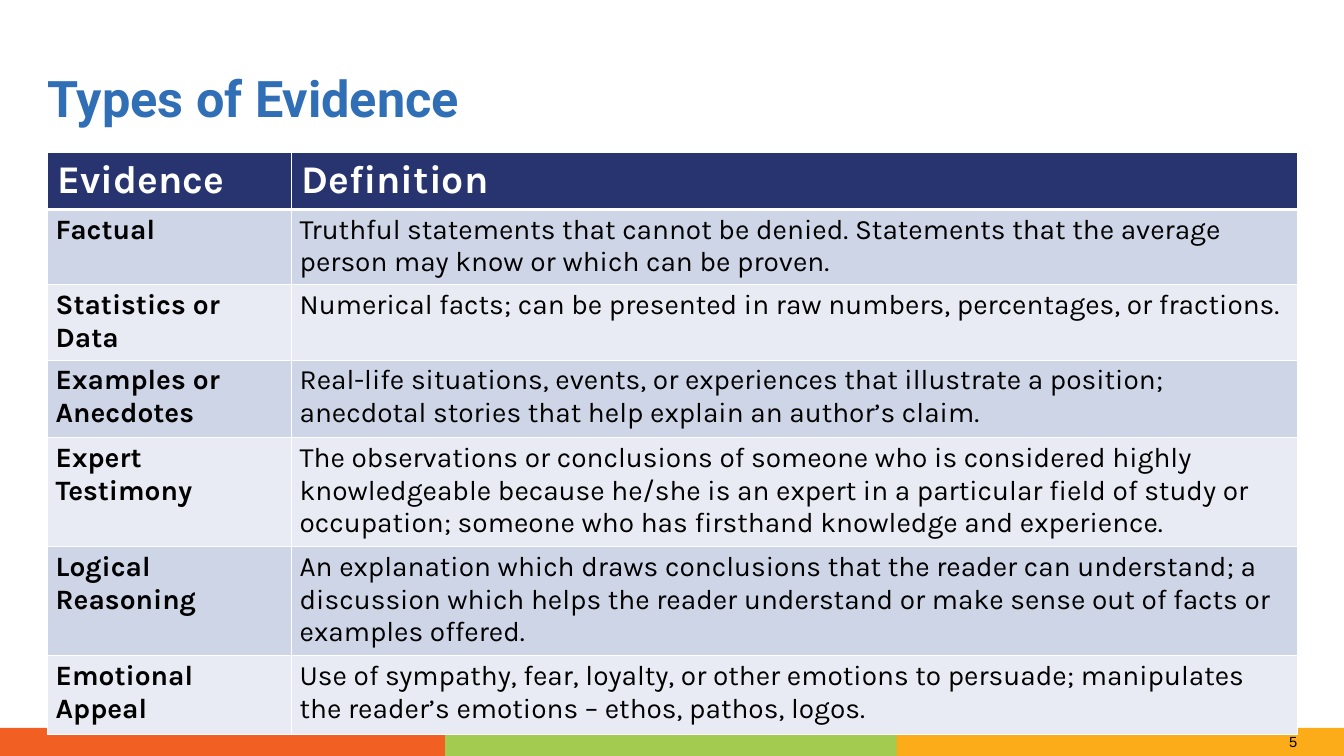
from pptx import Presentation
from pptx.dml.color import RGBColor
from pptx.enum.shapes import MSO_SHAPE
from pptx.enum.text import MSO_ANCHOR, PP_ALIGN
from pptx.oxml import parse_xml
from pptx.oxml.ns import nsdecls
from pptx.util import Pt

WHITE = RGBColor(0xFF, 0xFF, 0xFF)
BLACK = RGBColor(0, 0, 0)
BLUE = RGBColor(0x30, 0x6E, 0xB6)
NAVY = RGBColor(0x27, 0x34, 0x6F)
DARK = RGBColor(0xCD, 0xD5, 0xE6)
LIGHT = RGBColor(0xE8, 0xEB, 0xF3)
ORANGE = RGBColor(0xF1, 0x5F, 0x22)
GREEN = RGBColor(0xA2, 0xCB, 0x4F)
AMBER = RGBColor(0xFB, 0xAC, 0x18)


def write(frame, text, name, size, color, bold):
    frame.text = text
    font = frame.paragraphs[0].runs[0].font
    look = {"name": name, "size": Pt(size), "bold": bold}
    for key, value in look.items():
        setattr(font, key, value)
    font.color.rgb = color


def edge(cell, side, width):
    cell._tc.get_or_add_tcPr().append(parse_xml(
        f'<a:{side} {nsdecls("a")} w="{Pt(width)}"><a:solidFill>'
        f'<a:srgbClr val="{WHITE}"/></a:solidFill></a:{side}>'))


deck = Presentation()
deck.slide_width, deck.slide_height = Pt(960), Pt(540)
slide = deck.slides.add_slide(deck.slide_layouts[5])
shapes = slide.shapes

# Footer bars
for left, width, color in [(640, 320, AMBER), (0, 320, ORANGE), (318, 322.5, GREEN)]:
    bar = shapes.add_shape(MSO_SHAPE.RECTANGLE, Pt(left), Pt(520), Pt(width), Pt(20))
    bar.shadow.inherit = False
    bar.fill.solid()
    bar.fill.fore_color.rgb = color
    bar.line.fill.background()

# Page number
page = shapes.add_textbox(Pt(913.7), Pt(520), Pt(27.4), Pt(20))
page.text_frame.word_wrap = True
write(page.text_frame, "5", "Arial", 10.5, BLACK, False)

# Title
title = shapes.title
place = {"left": 34, "top": 55.5, "width": 893, "height": 34}
for key, value in place.items():
    setattr(title, key, Pt(value))
frame = title.text_frame
for side in ("left", "top", "right", "bottom"):
    setattr(frame, f"margin_{side}", 0)
frame.vertical_anchor = MSO_ANCHOR.MIDDLE
write(frame, "Types of Evidence", "Roboto", 36, BLUE, True)
frame.paragraphs[0].alignment = PP_ALIGN.LEFT
frame.paragraphs[0].line_spacing = 0.9

# Table of evidence
rows = [
    (24.5, "Evidence", "Definition"),
    (51.8, "Factual",
     "Truthful statements that cannot be denied. Statements that the average "
     "person may know or which can be proven."),
    (29.5, "Statistics or Data",
     "Numerical facts; can be presented in raw numbers, percentages, or fractions."),
    (55.4, "Examples or Anecdotes",
     "Real-life situations, events, or experiences that illustrate a position; "
     "anecdotal stories that help explain an author’s claim."),
    (72.7, "Expert Testimony",
     "The observations or conclusions of someone who is considered highly "
     "knowledgeable because he/she is an expert in a particular field of study or "
     "occupation; someone who has firsthand knowledge and experience."),
    (54, "Logical Reasoning",
     "An explanation which draws conclusions that the reader can understand; a "
     "discussion which helps the reader understand or make sense out of facts or "
     "examples offered."),
    (56.2, "Emotional Appeal",
     "Use of sympathy, fear, loyalty, or other emotions to persuade; manipulates "
     "the reader’s emotions – ethos, pathos, logos."),
]
table = shapes.add_table(len(rows), 2, Pt(34), Pt(108.7), Pt(893), Pt(344)).table
for col, width in zip(table.columns, (174.3, 718.7)):
    col.width = Pt(width)

inset = {"left": 5.8, "right": 5.8, "top": 2.9, "bottom": 2.9}
for r, (height, *texts) in enumerate(rows):
    table.rows[r].height = Pt(height)
    head = r == 0
    fill = NAVY if head else DARK if r % 2 else LIGHT
    for c, text in enumerate(texts):
        cell = table.cell(r, c)
        if not head:
            for side, value in inset.items():
                setattr(cell, f"margin_{side}", Pt(value))
        # Thick rule between the header and the body
        edges = {"lnL": 1, "lnR": 1, "lnT": 3 if r == 1 else 1, "lnB": 3 if head else 1}
        for side, width in edges.items():
            edge(cell, side, width)
        cell.fill.solid()
        cell.fill.fore_color.rgb = fill
        write(cell.text_frame, text, "Karla", 28 if head else 20,
              WHITE if head else BLACK, head or c == 0)

deck.save("out.pptx")
